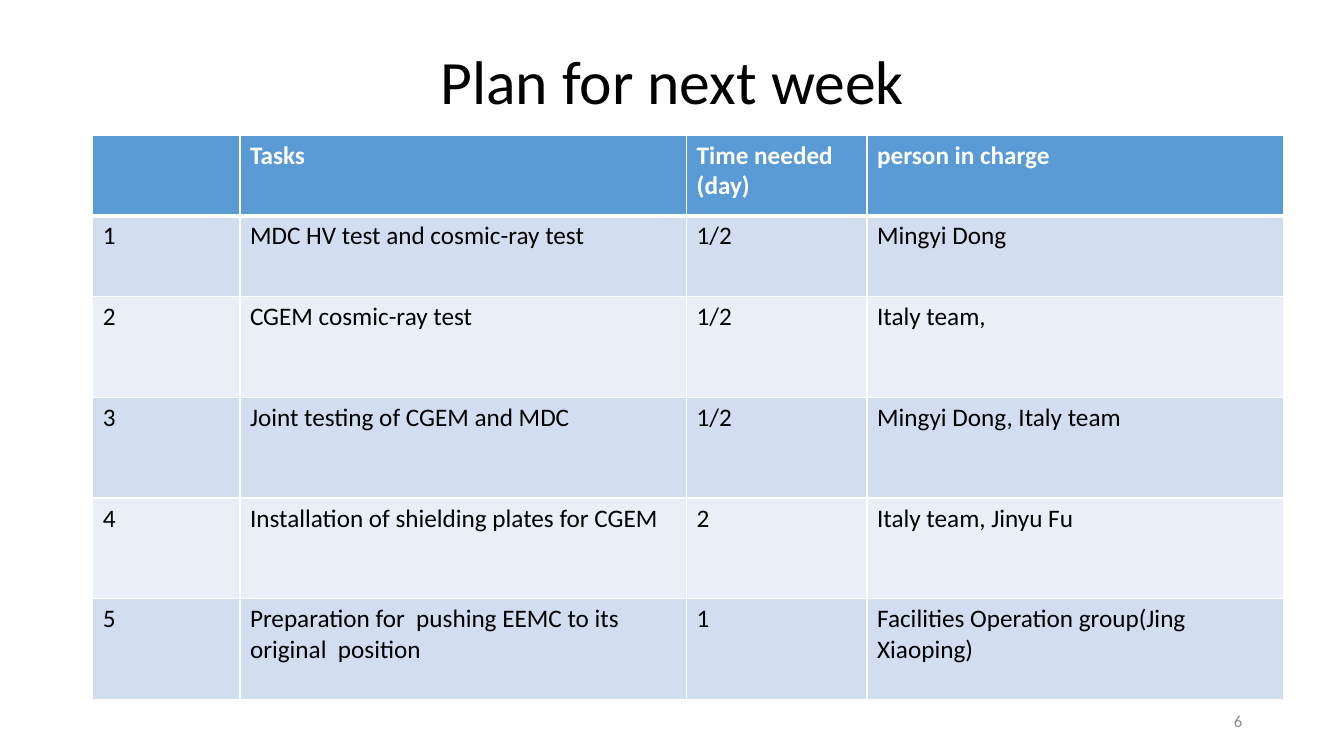
from dataclasses import astuple, dataclass

from lxml import etree
from pptx import Presentation
from pptx.dml.color import RGBColor
from pptx.enum.text import MSO_ANCHOR, PP_ALIGN
from pptx.oxml.ns import qn
from pptx.slide import Slide
from pptx.table import _Cell
from pptx.text.text import TextFrame
from pptx.util import Inches, Pt

LEFT, CENTER, RIGHT = PP_ALIGN.LEFT, PP_ALIGN.CENTER, PP_ALIGN.RIGHT
MIDDLE = MSO_ANCHOR.MIDDLE

FONT = "Calibri"
BLACK = RGBColor(0x00, 0x00, 0x00)
WHITE = RGBColor(0xFF, 0xFF, 0xFF)
GRAY = RGBColor(0x8C, 0x8C, 0x8C)
HEADER_BLUE = RGBColor(0x5B, 0x9B, 0xD5)
BAND_COLORS = (RGBColor(0xD2, 0xDE, 0xEF), RGBColor(0xEA, 0xEF, 0xF7))

COLUMN_WIDTHS = (1.46, 4.43, 1.79, 4.13)
ROW_HEIGHTS = (0.8, 0.8, 1, 1, 1, 1)
HEADINGS = ("", "Tasks", "Time needed (day)", "person in charge")


@dataclass
class Task:
    name: str
    days: str
    person: str


TASKS = (
    Task("MDC HV test and cosmic-ray test", "1/2", "Mingyi Dong"),
    Task("CGEM cosmic-ray test", "1/2", "Italy team,"),
    Task("Joint testing of CGEM and MDC", "1/2", "Mingyi Dong, Italy team"),
    Task("Installation of shielding plates for CGEM", "2", "Italy team, Jinyu Fu"),
    Task("Preparation for  pushing EEMC to its original  position", "1",
         "Facilities Operation group(Jing Xiaoping)"),
)


def write_text(frame: TextFrame, text: str, *, size: float, color: RGBColor,
               bold: bool = False, align: PP_ALIGN = LEFT,
               line_spacing: float = 1.0) -> None:
    frame.word_wrap = True
    paragraph = frame.paragraphs[0]
    paragraph.alignment = align
    paragraph.line_spacing = line_spacing
    paragraph.font.size = Pt(size)
    if text:
        run = paragraph.add_run()
        run.text = text
        run.font.name = FONT
        run.font.size = Pt(size)
        run.font.bold = bold
        run.font.color.rgb = color


def add_label(slide: Slide, text: str, left: float, top: float, width: float,
              height: float, **text_format) -> None:
    box = slide.shapes.add_textbox(Inches(left), Inches(top), Inches(width), Inches(height))
    box.text_frame.vertical_anchor = MIDDLE
    write_text(box.text_frame, text, **text_format)


def set_borders(cell: _Cell, top: float, bottom: float) -> None:
    """Draw white borders; top and bottom widths are in points."""
    properties = cell._tc.get_or_add_tcPr()
    for side, width in (("L", 1), ("R", 1), ("T", top), ("B", bottom)):
        line = etree.SubElement(properties, qn(f"a:ln{side}"), w=str(Pt(width)))
        fill = etree.SubElement(line, qn("a:solidFill"))
        etree.SubElement(fill, qn("a:srgbClr"), val=str(WHITE))


def add_plan_table(slide: Slide) -> None:
    rows = [HEADINGS] + [(str(number), *astuple(task))
                         for number, task in enumerate(TASKS, start=1)]
    table = slide.shapes.add_table(
        len(rows), len(HEADINGS), Inches(0.92), Inches(1.34),
        Inches(sum(COLUMN_WIDTHS)), Inches(sum(ROW_HEIGHTS))).table
    for column, width in zip(table.columns, COLUMN_WIDTHS):
        column.width = Inches(width)
    for row, height in zip(table.rows, ROW_HEIGHTS):
        row.height = Inches(height)

    for row_index, texts in enumerate(rows):
        is_header = row_index == 0
        fill_color = HEADER_BLUE if is_header else BAND_COLORS[(row_index - 1) % 2]
        for column_index, text in enumerate(texts):
            cell = table.cell(row_index, column_index)
            set_borders(cell, top=3 if row_index == 1 else 1, bottom=3 if is_header else 1)
            cell.fill.solid()
            cell.fill.fore_color.rgb = fill_color
            write_text(cell.text_frame, text, size=18, bold=is_header,
                       color=WHITE if is_header else BLACK)


def main() -> None:
    presentation = Presentation()
    presentation.slide_width = Inches(13.33)
    presentation.slide_height = Inches(7.5)
    slide = presentation.slides.add_slide(presentation.slide_layouts[6])
    add_label(slide, "Plan for next week", 0.92, 0.32, 11.5, 1.03,
              size=44, color=BLACK, align=CENTER, line_spacing=0.9)
    add_plan_table(slide)
    add_label(slide, "6", 9.42, 6.95, 3, 0.4, size=12, color=GRAY, align=RIGHT)
    presentation.save("out.pptx")


if __name__ == "__main__":
    main()
